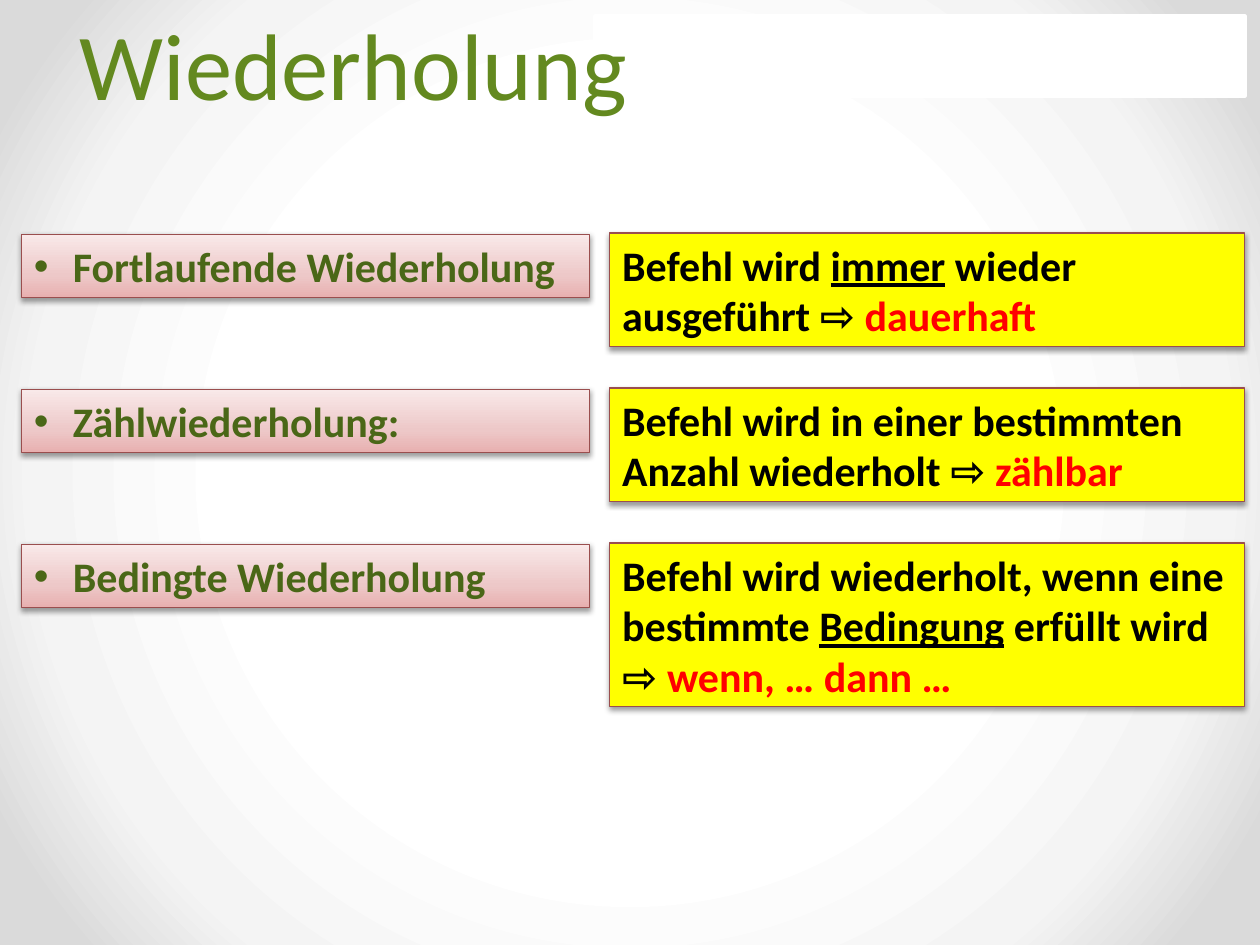
from dataclasses import dataclass

from lxml.etree import SubElement
from pptx import Presentation
from pptx.dml.color import RGBColor
from pptx.enum.shapes import MSO_SHAPE as Preset
from pptx.enum.text import MSO_ANCHOR as Anchor, MSO_AUTO_SIZE as AutoSize, PP_ALIGN as Align
from pptx.oxml.ns import qn
from pptx.util import Inches, Pt

BORDER, OLIVE, YELLOW, RED = "9A4E4E", "4A6717", "FFFF00", "FF0000"
PINK_STOPS = [(0, "E8B0B0"), (35, "EDC8C8"), (100, "F9E9E9")]
TITLE_STOPS = [(0, "314410"), (50, "63891F"), (100, "ABD958")]
BACKGROUND_STOPS = [(50, "FFFFFF"), (76, "F4F4F4"), (92, "DADADA")]

# Two columns (left edge, width) and the pitch of the rows
TERM_COLUMN = (0.17, 4.51)
MEANING_COLUMN = (4.84, 5.04)
FIRST_ROW, ROW_PITCH = 1.86, 1.23
LINE_HEIGHT, BOX_PADDING = 0.4, 0.1


@dataclass
class Part:
    text: str
    color: str = "000000"
    underline: bool = False


@dataclass
class Repetition:
    term: str
    meaning: list[Part]
    lines: int


REPETITIONS = [
    Repetition("Fortlaufende Wiederholung", [
        Part("Befehl wird "), Part("immer", underline=True),
        Part(" wieder ausgeführt ⇨ "), Part("dauerhaft", RED)], 2),
    Repetition("Zählwiederholung:", [
        Part("Befehl wird in einer bestimmten Anzahl wiederholt ⇨ "),
        Part("zählbar", RED)], 2),
    Repetition("Bedingte Wiederholung", [
        Part("Befehl wird wiederholt, wenn eine bestimmte "),
        Part("Bedingung", underline=True),
        Part(" erfüllt wird ⇨ "), Part("wenn, … dann …", RED)], 3),
]


def rgb(color: str) -> RGBColor:
    return RGBColor.from_string(color)


def set_gradient(parent, stops: list, angle: int | None = None) -> None:
    """Swap the solid fill in parent for a linear gradient, or a circular one without an angle."""
    solid = parent.find(qn("a:solidFill"))
    gradient = parent.makeelement(qn("a:gradFill"), {"rotWithShape": "1"})
    stop_list = SubElement(gradient, qn("a:gsLst"))
    for position, color in stops:
        stop = SubElement(stop_list, qn("a:gs"), pos=str(position * 1000))
        SubElement(stop, qn("a:srgbClr"), val=color)
    if angle is None:
        circle = SubElement(gradient, qn("a:path"), path="circle")
        SubElement(circle, qn("a:fillToRect"), dict.fromkeys("ltrb", "50000"))
    else:
        SubElement(gradient, qn("a:lin"), ang=str(angle * 60000), scaled="0")
    parent.replace(solid, gradient)


def add_shadow(box) -> None:
    effects = box._element.spPr.find(qn("a:effectLst"))
    shadow = SubElement(effects, qn("a:outerShdw"), blurRad=str(Pt(3.1)),
                        dist=str(Pt(1.6)), dir="5400000", rotWithShape="0")
    color = SubElement(shadow, qn("a:srgbClr"), val="000000")
    SubElement(color, qn("a:alpha"), val="38000")


def add_box(slide, left: float, top: float, width: float, height: float,
            fill: str, border: str, border_width: float):
    box = slide.shapes.add_shape(Preset.RECTANGLE, *map(Inches, (left, top, width, height)))
    box.shadow.inherit = False
    box.fill.solid()
    box.fill.fore_color.rgb = rgb(fill)
    box.line.color.rgb = rgb(border)
    box.line.width = Pt(border_width)
    return box


def write(shape, parts: list[Part], size: int = 24, bold: bool = True,
          align=Align.LEFT, wrap: bool = True, bullet: bool = False):
    frame = shape.text_frame
    frame.word_wrap = wrap
    frame.auto_size = AutoSize.SHAPE_TO_FIT_TEXT
    frame.vertical_anchor = Anchor.TOP
    paragraph = frame.paragraphs[0]
    paragraph.alignment = align
    if bullet:
        properties = paragraph._p.get_or_add_pPr()
        properties.set("marL", str(Inches(0.31)))
        properties.set("indent", str(-Inches(0.31)))
        SubElement(properties, qn("a:buFont"), typeface="Arial")
        SubElement(properties, qn("a:buChar"), char="•")
    for part in parts:
        run = paragraph.add_run()
        run.text = part.text
        run.font.name = "Calibri"
        run.font.size = Pt(size)
        run.font.bold = bold
        run.font.underline = part.underline
        run.font.color.rgb = rgb(part.color)
    return paragraph


def add_title(slide, title: str) -> None:
    box = slide.shapes.add_textbox(Inches(0.51), 0, Inches(4.59), Inches(1.01))
    paragraph = write(box, [Part(title)], size=54, bold=False, align=Align.CENTER, wrap=False)
    set_gradient(paragraph.runs[0]._r.rPr, TITLE_STOPS, 90)


def add_repetition(slide, row: int, repetition: Repetition) -> None:
    top = FIRST_ROW + row * ROW_PITCH
    left, width = TERM_COLUMN
    term = add_box(slide, left, top, width, LINE_HEIGHT + BOX_PADDING,
                   PINK_STOPS[0][1], BORDER, 0.75)
    set_gradient(term._element.spPr, PINK_STOPS, 270)
    write(term, [Part(repetition.term, OLIVE)], bullet=True)

    left, width = MEANING_COLUMN
    height = repetition.lines * LINE_HEIGHT + BOX_PADDING
    meaning = add_box(slide, left, top - 0.01, width, height, YELLOW, BORDER, 0.75)
    write(meaning, repetition.meaning)
    for box in (term, meaning):
        add_shadow(box)


def main() -> None:
    deck = Presentation()
    deck.slide_width, deck.slide_height = Inches(10), Inches(7.5)
    slide = deck.slides.add_slide(deck.slide_layouts[6])

    slide.background.fill.solid()
    slide.background.fill.fore_color.rgb = rgb("FFFFFF")
    set_gradient(slide.element.find(".//" + qn("p:bgPr")), BACKGROUND_STOPS)

    add_box(slide, 4.72, 0.13, 5.16, 0.63, "FFFFFF", "FFFFFF", 2.25)
    add_title(slide, "Wiederholung")
    for row, repetition in enumerate(REPETITIONS):
        add_repetition(slide, row, repetition)
    deck.save("out.pptx")


if __name__ == "__main__":
    main()
